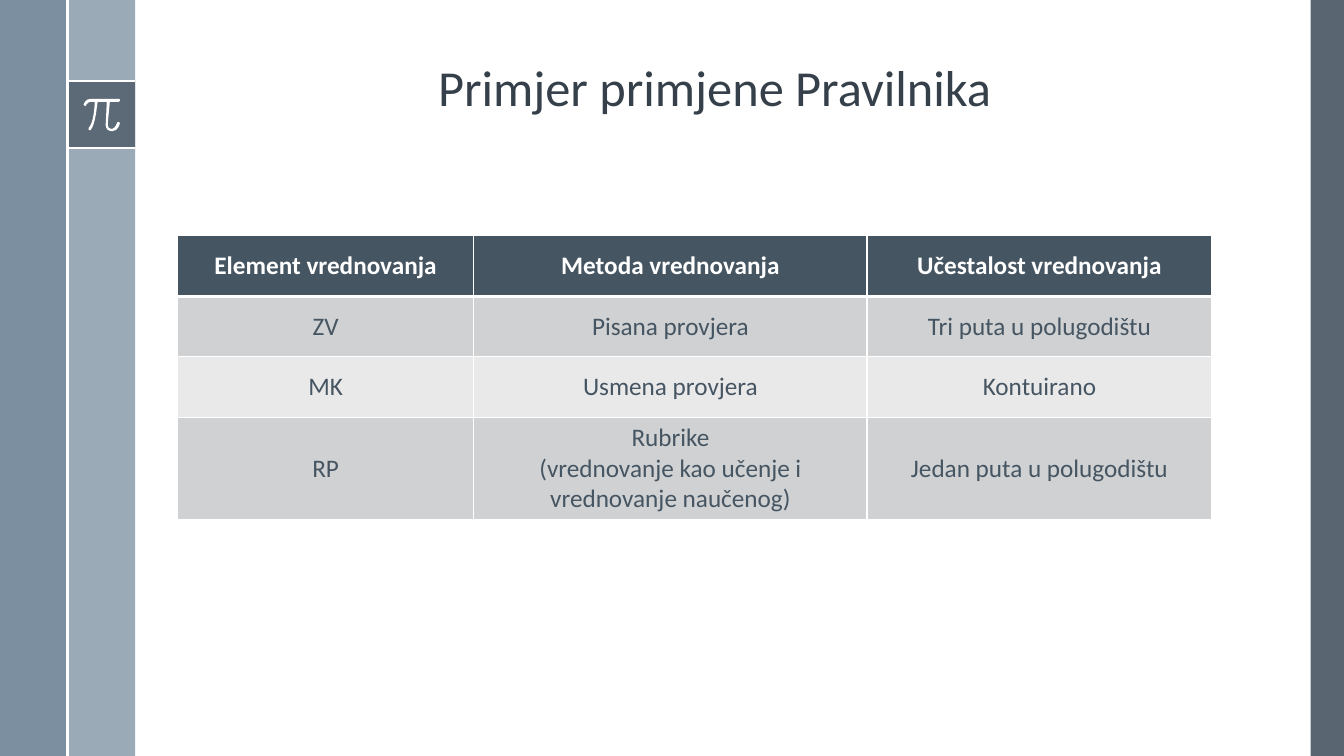
from lxml.etree import SubElement
from pptx import Presentation
from pptx.dml.color import RGBColor
from pptx.enum.shapes import MSO_CONNECTOR, MSO_SHAPE
from pptx.enum.text import MSO_ANCHOR, PP_ALIGN
from pptx.oxml.ns import qn
from pptx.util import Inches, Pt

WHITE = RGBColor(0xFF, 0xFF, 0xFF)
SLATE = RGBColor(0x47, 0x55, 0x62)
MIST = RGBColor(0x9B, 0xAA, 0xB7)
STEEL = RGBColor(0x6A, 0x80, 0x93)
TITLE_INK = RGBColor(0x35, 0x40, 0x4A)
TABLE_INK = RGBColor(0x46, 0x55, 0x62)
BAND_DARK = RGBColor(0xCF, 0xD1, 0xD3)
BAND_LIGHT = RGBColor(0xE9, 0xE9, 0xEA)
FONT = "Calibri"

BAR = 0.67
BADGE_TOP = 0.8

# Two numbers are a corner, six are a cubic curve.
PI_START = (1.18, 0.98)
PI_OUTLINE = [
    (0.9, 0.98),
    (0.85, 0.98, 0.83, 1.03, 0.83, 1.04),
    (0.83, 1.04, 0.83, 1.05, 0.84, 1.05),
    (0.85, 1.05),
    (0.85, 1.05, 0.87, 1.01, 0.9, 1.01),
    (0.94, 1.01),
    (0.94, 1.05, 0.93, 1.22, 0.88, 1.27),
    (0.87, 1.28, 0.87, 1.28, 0.88, 1.29),
    (0.9, 1.29),
    (0.95, 1.23, 0.96, 1.05, 0.97, 1.01),
    (1.06, 1.01),
    (1.05, 1.22),
    (1.05, 1.22, 1.04, 1.26, 1.07, 1.29),
    (1.08, 1.3, 1.09, 1.3, 1.1, 1.3),
    (1.12, 1.3),
    (1.17, 1.3, 1.19, 1.23, 1.19, 1.22),
    (1.19, 1.22, 1.18, 1.21, 1.18, 1.21),
    (1.17, 1.21, 1.16, 1.21, 1.16, 1.22),
    (1.16, 1.22, 1.15, 1.27, 1.11, 1.28),
    (1.1, 1.28, 1.09, 1.28, 1.08, 1.27),
    (1.07, 1.26, 1.07, 1.23, 1.07, 1.22),
    (1.09, 1.01),
    (1.18, 1.01),
    (1.19, 1.01, 1.19, 1, 1.19, 1),
    (1.19, 0.99, 1.19, 0.98, 1.18, 0.98),
]

COLUMN_WIDTHS = [2.94, 3.9, 3.42]
ROWS = [
    ["Element vrednovanja", "Metoda vrednovanja", "Učestalost vrednovanja"],
    ["ZV", "Pisana provjera", "Tri puta u polugodištu"],
    ["MK", "Usmena provjera", "Kontuirano"],
    ["RP", "Rubrike\n(vrednovanje kao učenje i vrednovanje naučenog)",
     "Jedan puta u polugodištu"],
]


def paint(shape, color):
    shape.shadow.inherit = False
    shape.fill.solid()
    shape.fill.fore_color.rgb = color
    shape.line.fill.background()


def add_bar(s, x, y, w, h, color, opacity=100):
    bar = s.shapes.add_shape(MSO_SHAPE.RECTANGLE, Inches(x), Inches(y),
                             Inches(w), Inches(h))
    paint(bar, color)
    if opacity < 100:
        clr = bar.element.spPr.find(qn("a:solidFill"))[0]
        SubElement(clr, qn("a:alpha"), val=str(opacity * 1000))


def add_rule(s, x1, y1, x2, y2):
    rule = s.shapes.add_connector(MSO_CONNECTOR.STRAIGHT, Inches(x1), Inches(y1),
                                  Inches(x2), Inches(y2))
    rule.line.color.rgb = WHITE
    rule.line.width = Pt(1.5)
    SubElement(rule.element.spPr, qn("a:effectLst"))


def bend(segment, curve, shape):
    """Turn a straight outline segment of the shape into a cubic curve."""
    segment.tag = qn("a:cubicBezTo")
    segment.clear()
    for x, y in zip(curve[::2], curve[1::2]):
        SubElement(segment, qn("a:pt"), x=str(Inches(x) - shape.left),
                   y=str(Inches(y) - shape.top))


def add_pi(s):
    builder = s.shapes.build_freeform(*map(Inches, PI_START))
    builder.add_line_segments([(Inches(part[-2]), Inches(part[-1]))
                               for part in PI_OUTLINE], close=True)
    pi = builder.convert_to_shape()
    paint(pi, WHITE)
    segments = list(pi.element.iter(qn("a:lnTo")))
    for segment, part in zip(segments, PI_OUTLINE):
        if len(part) == 6:
            bend(segment, part, pi)


def add_title(s, text):
    title = s.shapes.title
    title.left, title.top = Inches(1.74), Inches(0.18)
    title.width, title.height = Inches(10.7), Inches(1.04)
    tf = title.text_frame
    tf.text = text
    tf.word_wrap = True
    tf.vertical_anchor = MSO_ANCHOR.BOTTOM
    p = tf.paragraphs[0]
    p.line_spacing = 0.9
    format_paragraph(p, 36, TITLE_INK)


def format_paragraph(p, size, color, bold=False):
    p.alignment = PP_ALIGN.CENTER
    for r in p.runs:
        r.font.name = FONT
        r.font.size = Pt(size)
        r.font.bold = bold
        r.font.color.rgb = color


def set_borders(cell, widths):
    """Draw white borders; widths maps a:ln tags to points, in schema order."""
    tcPr = cell._tc.get_or_add_tcPr()
    for i, (tag, width) in enumerate(widths.items()):
        ln = SubElement(tcPr, qn(tag), w=str(Pt(width)))
        SubElement(SubElement(ln, qn("a:solidFill")), qn("a:srgbClr"), val=str(WHITE))
        tcPr.insert(i, ln)


def add_grading_table(s):
    frame = s.shapes.add_table(len(ROWS), len(COLUMN_WIDTHS), Inches(1.76), Inches(2.34),
                               Inches(sum(COLUMN_WIDTHS)), Inches(0.6 * len(ROWS)))
    table = frame.table
    for column, width in zip(table.columns, COLUMN_WIDTHS):
        column.width = Inches(width)
    for i, row in enumerate(ROWS):
        header = i == 0
        band = TABLE_INK if header else BAND_DARK if i % 2 else BAND_LIGHT
        widths = {"a:lnL": 1, "a:lnR": 1, "a:lnT": 3 if i == 1 else 1,
                  "a:lnB": 3 if header else 1}
        for j, text in enumerate(row):
            cell = table.cell(i, j)
            cell.text_frame.text = text
            cell.vertical_anchor = MSO_ANCHOR.MIDDLE
            cell.fill.solid()
            cell.fill.fore_color.rgb = band
            set_borders(cell, widths)
            for p in cell.text_frame.paragraphs:
                format_paragraph(p, 18, WHITE if header else TABLE_INK, header)


def main():
    prs = Presentation()
    prs.slide_width, prs.slide_height = Inches(13.33), Inches(7.5)
    s = prs.slides.add_slide(prs.slide_layouts[5])
    add_bar(s, 13, 0, 0.33, 7.5, SLATE, 90)
    add_bar(s, BAR, 0, BAR, 7.5, MIST)
    add_bar(s, 0, 0, BAR, 7.5, STEEL, 88)
    add_bar(s, BAR, BADGE_TOP, BAR, BAR, SLATE, 75)
    for y in (BADGE_TOP, BADGE_TOP + BAR):
        add_rule(s, BAR, y, 2 * BAR, y)
    add_pi(s)
    add_rule(s, BAR, 0, BAR, 7.5)
    add_title(s, "Primjer primjene Pravilnika")
    add_grading_table(s)
    prs.save("out.pptx")


if __name__ == "__main__":
    main()
